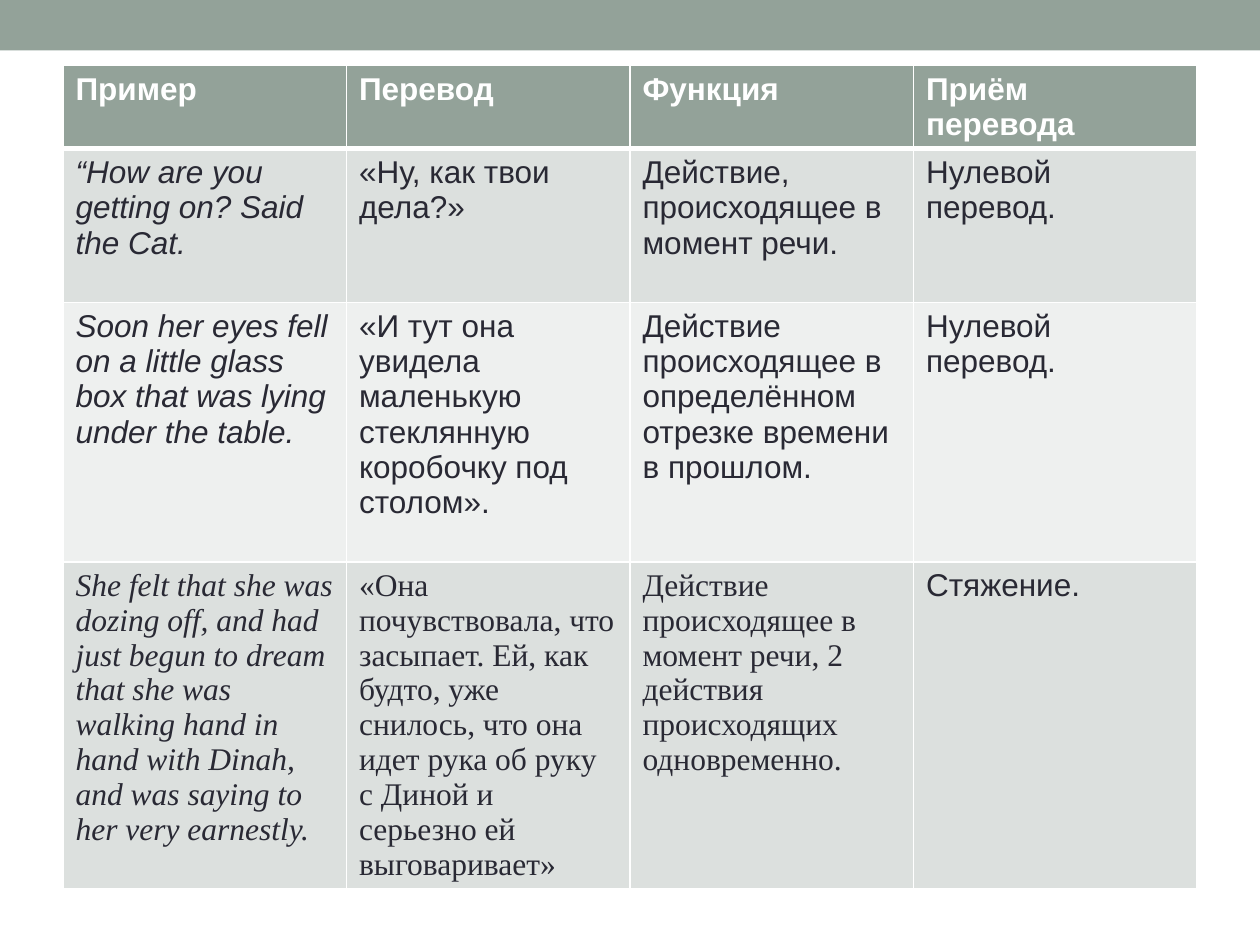
from pptx import Presentation
from pptx.dml.color import RGBColor
from pptx.enum.shapes import MSO_SHAPE
from pptx.oxml import parse_xml
from pptx.oxml.ns import nsdecls
from pptx.util import Inches, Pt

RECTANGLE = MSO_SHAPE.RECTANGLE
WHITE = RGBColor(0xFF, 0xFF, 0xFF)
SAGE = RGBColor(0x93, 0xA2, 0x99)
BAND_DARK = RGBColor(0xDC, 0xE0, 0xDE)
BAND_LIGHT = RGBColor(0xEE, 0xF0, 0xEF)
INK = RGBColor(0x29, 0x29, 0x34)
SANS, SERIF = "Arial", "Times New Roman"

HEADER = ["Пример", "Перевод", "Функция", "Приём перевода"]
EXAMPLES = [
    ["“How are you getting on? Said the Cat.",
     "«Ну, как твои дела?»",
     "Действие, происходящее в момент речи.",
     "Нулевой перевод."],
    ["Soon her eyes fell on a little glass box that was lying under the table.",
     "«И тут она увидела маленькую стеклянную коробочку под столом».",
     "Действие происходящее в определённом отрезке времени в прошлом.",
     "Нулевой перевод."],
    ["She felt that she was dozing off, and had just begun to dream that she "
     "was walking hand in hand with Dinah, and was saying to her very earnestly.",
     "«Она почувствовала, что засыпает. Ей, как будто, уже снилось, что она "
     "идет рука об руку с Диной и серьезно ей выговаривает»",
     "Действие происходящее в момент речи, 2 действия происходящих одновременно.",
     "Стяжение."],
]
ROW_HEIGHTS = [0.66, 1.22, 2.06, 2.59]
COLUMN_WIDTH = 2.25


class SlideBuilder:
    text_size = Pt(18)

    def __init__(self, page):
        self.page = page

    def bar(self, left, top, width, height, color):
        box = self.page.shapes.add_shape(
            RECTANGLE, Inches(left), Inches(top), Inches(width), Inches(height))
        box.shadow.inherit = False
        box.fill.solid()
        box.fill.fore_color.rgb = color
        box.line.fill.background()

    def table(self, left, top, column_count, column_width, row_heights):
        frame = self.page.shapes.add_table(
            len(row_heights), column_count, Inches(left), Inches(top),
            Inches(column_count * column_width), Inches(sum(row_heights)))
        for column in frame.table.columns:
            column.width = Inches(column_width)
        for row, height in zip(frame.table.rows, row_heights):
            row.height = Inches(height)
        return frame.table

    def cell(self, cell, text, fill, color, font=SANS, bold=False, italic=False,
             top_line=1, bottom_line=1):
        span = cell.text_frame.paragraphs[0].add_run()
        span.text = text
        span.font.name = font
        span.font.size = self.text_size
        span.font.bold = bold
        span.font.italic = italic
        span.font.color.rgb = color
        # Borders precede the fill in the cell properties
        properties = cell._tc.get_or_add_tcPr()
        for side, points in zip("LRTB", (1, 1, top_line, bottom_line)):
            properties.append(parse_xml(
                f'<a:ln{side} {nsdecls("a")} w="{Pt(points)}"><a:solidFill>'
                f'<a:srgbClr val="{WHITE}"/></a:solidFill></a:ln{side}>'))
        cell.fill.solid()
        cell.fill.fore_color.rgb = fill


def main():
    deck = Presentation()
    deck.slide_width, deck.slide_height = Inches(10), Inches(7.5)
    builder = SlideBuilder(deck.slides.add_slide(deck.slide_layouts[6]))

    # Top band
    builder.bar(0, 0, 10, 0.4, SAGE)

    # Table header
    table = builder.table(0.5, 0.52, len(HEADER), COLUMN_WIDTH, ROW_HEIGHTS)
    for column, title in enumerate(HEADER):
        builder.cell(table.cell(0, column), title, SAGE, WHITE,
                     bold=True, bottom_line=3)

    # Examples: banded rows, English in italics, the last one mostly in serif
    for row, texts in enumerate(EXAMPLES, start=1):
        fill = BAND_DARK if row % 2 else BAND_LIGHT
        for column, text in enumerate(texts):
            is_serif = row == len(EXAMPLES) and column < len(HEADER) - 1
            builder.cell(table.cell(row, column), text, fill, INK,
                         font=SERIF if is_serif else SANS,
                         italic=column == 0, top_line=3 if row == 1 else 1)

    deck.save("out.pptx")


if __name__ == "__main__":
    main()
